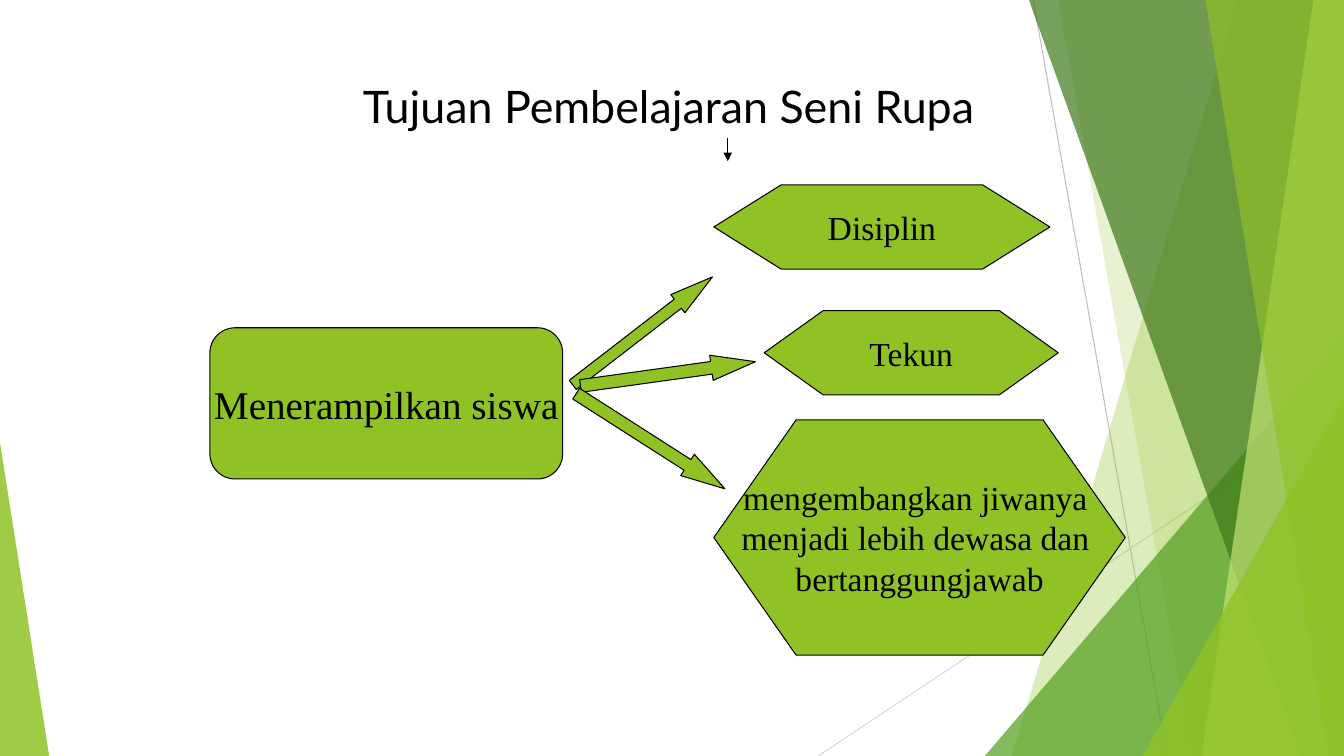
import dataclasses

import lxml.etree
import pptx
import pptx.dml.color
import pptx.enum.shapes
import pptx.enum.text
import pptx.oxml.ns
import pptx.shapes.autoshape
import pptx.shapes.connector
import pptx.slide
import pptx.text.text
import pptx.util

Cm = pptx.util.Cm
Kind = pptx.enum.shapes.MSO_SHAPE
Align = pptx.enum.text.PP_ALIGN
WIDE, HIGH = 33.87, 19.05
SERIF = "Times New Roman"
HUES = {
    "lime": "90C226",
    "leaf": "54A021",
    "moss": "3F7819",
    "pale": "C0E474",
    "black": "000000",
    "grey": "BFBFBF",
    "mist": "D9D9D9",
}


@dataclasses.dataclass
class Pane:
    """Band whose slanted left edge runs from top to base, reaching the slide's right edge."""
    top: float
    base: float
    hue: str
    alpha: int


@dataclasses.dataclass
class Wedge:
    left: float
    top: float
    width: float
    tip: float
    hue: str
    alpha: int


@dataclasses.dataclass
class Node:
    kind: Kind
    left: float
    top: float
    width: float
    height: float
    lines: tuple[str, ...]
    size: int = 24


@dataclasses.dataclass
class Arrow:
    left: float
    top: float
    height: float
    turn: float
    head: float = 1.75


RULES = [
    (26.04, 0, 29.41, HIGH, "grey"),
    (WIDE, 10.24, 20.62, HIGH, "mist"),
]
BACK = [
    Pane(31.19, 25.5, "lime", 30),
    Pane(26.67, 30.05, "lime", 20),
    Wedge(24.82, 8.46, 9.05, 1, "leaf", 72),
    Pane(25.93, 32.79, "moss", 70),
    Pane(33.1, 30.28, "pale", 70),
    Pane(30.38, 33.48, "lime", 65),
    Wedge(28.8, 9.98, 5.07, 1, "lime", 80),
    Wedge(0, 11.15, 1.24, 0, "lime", 85),
]
NODES = [
    Node(Kind.FLOWCHART_ALTERNATE_PROCESS, 5.29, 8.26, 8.89, 3.81,
         ("Menerampilkan siswa",), 28),
    Node(Kind.FLOWCHART_PREPARATION, 17.99, 4.66, 8.47, 2.12, ("Disiplin",)),
    Node(Kind.FLOWCHART_PREPARATION, 19.26, 7.83, 7.41, 2.12, ("Tekun",)),
    Node(Kind.FLOWCHART_PREPARATION, 17.99, 10.58, 10.37, 5.93,
         ("mengembangkan jiwanya ", "menjadi lebih dewasa dan ", "bertanggungjawab")),
]
ARROWS = [
    Arrow(13.97, 8.05, 0.58, 322.3, 1.9),
    Arrow(14.61, 9.1, 0.64, 352.1),
    Arrow(14.17, 10.8, 0.64, 32.6),
]


def tint(hue: str) -> pptx.dml.color.RGBColor:
    return pptx.dml.color.RGBColor.from_string(HUES[hue])


def paint(shape: pptx.shapes.autoshape.Shape, hue: str, alpha: int = 100) -> None:
    """Fill a shape; opaque ones get a black outline, clear ones get none."""
    shape.shadow.inherit = False
    shape.fill.solid()
    shape.fill.fore_color.rgb = tint(hue)
    if alpha < 100:
        shape.line.fill.background()
        color = shape.fill._xPr.find(".//" + pptx.oxml.ns.qn("a:srgbClr"))
        lxml.etree.SubElement(color, pptx.oxml.ns.qn("a:alpha"), val=str(alpha * 1000))
    else:
        shape.line.color.rgb = tint("black")
        shape.line.width = pptx.util.Pt(0.75)


def write(frame: pptx.text.text.TextFrame, lines: tuple[str, ...], *, font: str,
          size: int, align: Align = Align.CENTER, wrap: bool = False) -> None:
    frame.word_wrap = wrap
    frame.auto_size = pptx.enum.text.MSO_AUTO_SIZE.NONE
    frame.vertical_anchor = pptx.enum.text.MSO_ANCHOR.MIDDLE
    for i, line in enumerate(lines):
        para = frame.paragraphs[0] if i == 0 else frame.add_paragraph()
        para.alignment = align
        run = para.add_run()
        run.text = line
        run.font.name = font
        run.font.size = pptx.util.Pt(size)
        run.font.color.rgb = tint("black")


def rule(slide: pptx.slide.Slide, x1: float, y1: float, x2: float, y2: float,
         hue: str) -> pptx.shapes.connector.Connector:
    line = slide.shapes.add_connector(
        pptx.enum.shapes.MSO_CONNECTOR.STRAIGHT, Cm(x1), Cm(y1), Cm(x2), Cm(y2))
    line.line.color.rgb = tint(hue)
    line.line.width = pptx.util.Pt(0.75)
    lxml.etree.SubElement(line._element.spPr, pptx.oxml.ns.qn("a:effectLst"))
    return line


def add_pane(slide: pptx.slide.Slide, pane: Pane) -> None:
    form = slide.shapes.build_freeform(Cm(pane.top), 0)
    form.add_line_segments(
        [(Cm(WIDE), 0), (Cm(WIDE), Cm(HIGH)), (Cm(pane.base), Cm(HIGH))], close=True)
    paint(form.convert_to_shape(), pane.hue, pane.alpha)


def add_wedge(slide: pptx.slide.Slide, wedge: Wedge) -> None:
    shape = slide.shapes.add_shape(
        Kind.ISOSCELES_TRIANGLE, Cm(wedge.left), Cm(wedge.top),
        Cm(wedge.width), Cm(HIGH - wedge.top))
    shape.adjustments[0] = wedge.tip
    paint(shape, wedge.hue, wedge.alpha)


def add_node(slide: pptx.slide.Slide, node: Node) -> None:
    shape = slide.shapes.add_shape(
        node.kind, Cm(node.left), Cm(node.top), Cm(node.width), Cm(node.height))
    paint(shape, "lime")
    write(shape.text_frame, node.lines, font=SERIF, size=node.size)


def add_arrow(slide: pptx.slide.Slide, arrow: Arrow) -> None:
    shape = slide.shapes.add_shape(
        Kind.RIGHT_ARROW, Cm(arrow.left), Cm(arrow.top), Cm(4.45), Cm(arrow.height))
    shape.adjustments[1] = arrow.head
    shape.rotation = arrow.turn
    paint(shape, "lime")


def main() -> None:
    deck = pptx.Presentation()
    deck.slide_width, deck.slide_height = Cm(WIDE), Cm(HIGH)
    slide = deck.slides.add_slide(deck.slide_layouts[5])

    for ends in RULES:
        rule(slide, *ends)
    for part in BACK:
        if isinstance(part, Pane):
            add_pane(slide, part)
        else:
            add_wedge(slide, part)

    title = slide.shapes.title
    title.left, title.top = Cm(8.89), Cm(1.7)
    title.width, title.height = Cm(19.48), Cm(1.9)
    write(title.text_frame, ("Tujuan Pembelajaran Seni Rupa",),
          font="Lato", size=32, align=Align.LEFT, wrap=True)

    for node in NODES:
        add_node(slide, node)
    for arrow in ARROWS:
        add_arrow(slide, arrow)
    down = rule(slide, 18.34, 3.47, 18.34, 4.06, "black")
    lxml.etree.SubElement(
        down.line._get_or_add_ln(), pptx.oxml.ns.qn("a:tailEnd"), type="triangle")

    deck.save("out.pptx")


if __name__ == "__main__":
    main()
